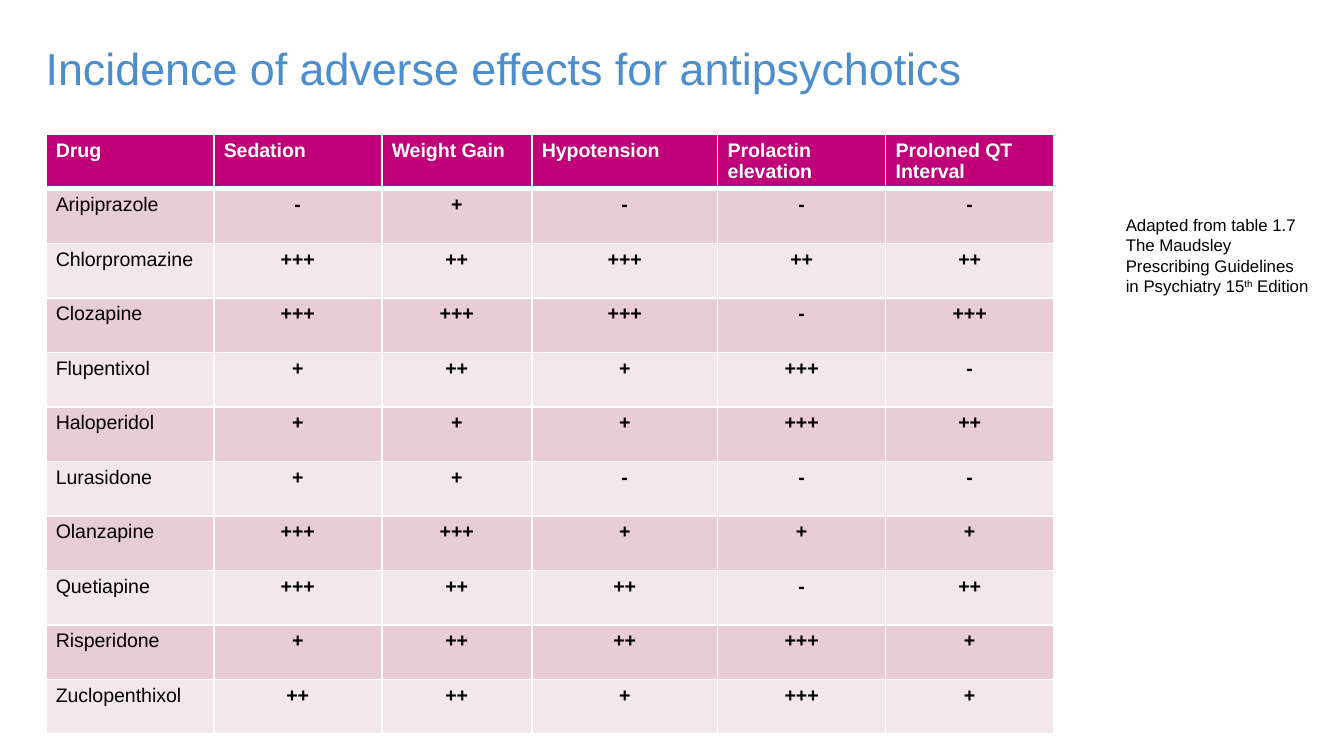
import pptx
import pptx.util
import pptx.dml.color
import pptx.enum.text
import pptx.oxml
import pptx.oxml.ns

Pt = pptx.util.Pt
Align = pptx.enum.text.PP_ALIGN
Anchor = pptx.enum.text.MSO_ANCHOR
NS = pptx.oxml.ns.nsdecls("a")

HEADS = ["Drug", "Sedation", "Weight Gain", "Hypotension",
         "Prolactin elevation", "Proloned QT Interval"]
DRUGS = [
    ["Aripiprazole", "-", "+", "-", "-", "-"],
    ["Chlorpromazine", "+++", "++", "+++", "++", "++"],
    ["Clozapine", "+++", "+++", "+++", "-", "+++"],
    ["Flupentixol", "+", "++", "+", "+++", "-"],
    ["Haloperidol", "+", "+", "+", "+++", "++"],
    ["Lurasidone", "+", "+", "-", "-", "-"],
    ["Olanzapine", "+++", "+++", "+", "+", "+"],
    ["Quetiapine", "+++", "++", "++", "-", "++"],
    ["Risperidone", "+", "++", "++", "+++", "+"],
    ["Zuclopenthixol", "++", "++", "+", "+++", "+"],
]
WIDTHS = [90, 90, 80.4, 99.6, 90, 90]


def color(text):
    return pptx.dml.color.RGBColor.from_string(text)


def add_run(para, text, size, tint, bold=False):
    run = para.add_run()
    run.text = text
    run.font.name = "Arial"
    run.font.size = Pt(size)
    run.font.bold = bold
    run.font.color.rgb = color(tint)
    return run


def add_box(slide, left, top, width, height):
    box = slide.shapes.add_textbox(Pt(left), Pt(top), Pt(width), Pt(height))
    box.text_frame.word_wrap = True
    return box.text_frame


def add_title(slide, left, top, width, height):
    frame = add_box(slide, left, top, width, height)
    frame.margin_left = frame.margin_right = 0
    frame.margin_top = frame.margin_bottom = 0
    frame.vertical_anchor = Anchor.MIDDLE
    para = frame.paragraphs[0]
    para.line_spacing = 0.9
    run = add_run(para, "Incidence of adverse effects for antipsychotics",
                  24, "005EB8")
    tint = run.font.fill._xPr.find(".//" + pptx.oxml.ns.qn("a:srgbClr"))
    tint.append(pptx.oxml.parse_xml(f'<a:alpha {NS} val="70000"/>'))


def add_edges(cell, base):
    props = cell._tc.get_or_add_tcPr()
    edges = {"lnL": 1, "lnR": 1, "lnT": 1, "lnB": base}
    for spot, (tag, width) in enumerate(edges.items()):
        props.insert(spot, pptx.oxml.parse_xml(
            f'<a:{tag} {NS} w="{Pt(width)}"><a:solidFill>'
            f'<a:srgbClr val="FFFFFF"/></a:solidFill></a:{tag}>'))


def add_grid(slide, left, top, width, height):
    rows = [HEADS] + DRUGS
    table = slide.shapes.add_table(len(rows), len(HEADS), Pt(left), Pt(top),
                                   Pt(width), Pt(height)).table
    for col, share in zip(table.columns, WIDTHS):
        col.width = Pt(width * share / sum(WIDTHS))
    for y, row in enumerate(rows):
        table.rows[y].height = Pt(height / len(rows))
        head = y == 0
        fill = "BF0078" if head else ("F4E7EC", "E8CCD6")[y % 2]
        for x, text in enumerate(row):
            cell = table.cell(y, x)
            cell.margin_left = cell.margin_right = Pt(5.4)
            cell.margin_top = cell.margin_bottom = Pt(2.7)
            cell.fill.solid()
            cell.fill.fore_color.rgb = color(fill)
            add_edges(cell, 3 if head else 1)
            para = cell.text_frame.paragraphs[0]
            para.alignment = Align.LEFT if head or x == 0 else Align.CENTER
            add_run(para, text, 10.5, "FFFFFF" if head else "000000",
                    head or x > 0)


def add_note(slide, left, top, width, height):
    frame = add_box(slide, left, top, width, height)
    add_run(frame.paragraphs[0], "Adapted from table 1.7", 9, "000000")
    para = frame.add_paragraph()
    add_run(para, "The Maudsley Prescribing Guidelines in Psychiatry 15",
            9, "000000")
    mark = add_run(para, "th", 9, "000000")
    mark.font._element.set("baseline", "30000")
    add_run(para, " Edition", 9, "000000")


def main():
    deck = pptx.Presentation()
    deck.slide_width, deck.slide_height = Pt(720), Pt(405)
    slide = deck.slides.add_slide(deck.slide_layouts[6])
    add_grid(slide, 24.5, 72, 540, 321.2)
    add_title(slide, 24.5, 16.5, 672.5, 42.5)
    add_note(slide, 596, 111.6, 112.5, 62)
    deck.save("out.pptx")


if __name__ == "__main__":
    main()
